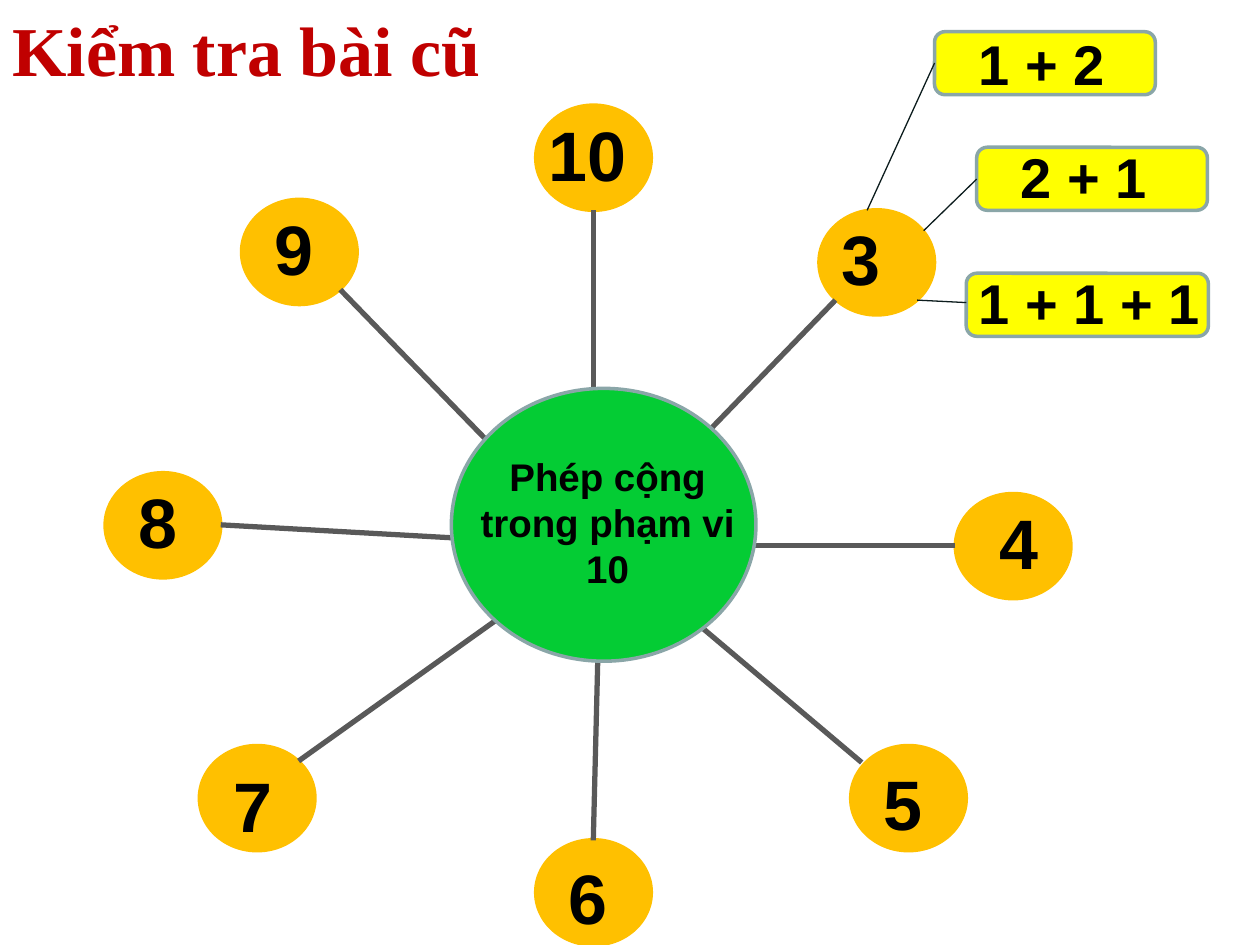
from dataclasses import dataclass

from lxml import etree
from pptx import Presentation
from pptx.dml.color import RGBColor
from pptx.enum import shapes as sh, text as tx
from pptx.oxml import ns
from pptx.util import Cm, Pt

RED = RGBColor(0xC0, 0x00, 0x00)
GOLD = RGBColor(0xFF, 0xC0, 0x00)
GREEN = RGBColor(0x04, 0xCC, 0x34)
YELLOW = RGBColor(0xFF, 0xFF, 0x00)
STEEL = RGBColor(0x8A, 0xA6, 0xA8)
GRAY = RGBColor(0x59, 0x59, 0x59)
DARK = RGBColor(0x0C, 0x1C, 0x1D)
BLACK = RGBColor(0x00, 0x00, 0x00)

OVAL = sh.MSO_SHAPE.OVAL
ROUND = sh.MSO_SHAPE.ROUNDED_RECTANGLE
Point = tuple[float, float]


@dataclass
class Disc:
    label: str
    at: Point
    text: Point
    start: Point
    end: Point
    width: float = 1.48


@dataclass
class Sum:
    label: str
    at: Point
    width: float
    text: Point
    room: float
    start: Point
    end: Point


# Lengths are in centimetres.
DISCS = [
    Disc("10", (10.8, 2.12), (10.8, 2.12), (11.96, 8.69), (11.96, 4.24), 2.12),
    Disc("3", (16.51, 4.23), (16.72, 4.23), (13.23, 9.78), (16.84, 6.05)),
    Disc("4", (19.26, 9.95), (19.9, 9.95), (19.26, 11), (13.77, 11)),
    Disc("5", (17.15, 15.03), (17.57, 15.2), (17.37, 15.37), (13.97, 12.5)),
    Disc("6", (10.8, 16.93), (11.22, 17.1), (11.96, 16.94), (12.07, 12.5)),
    Disc("7", (4.02, 15.03), (4.45, 15.24), (6.02, 15.34), (10.69, 12.01)),
    Disc("8", (2.12, 9.53), (2.54, 9.53), (4.45, 10.58), (10.16, 10.9)),
    Disc("9", (4.87, 4.02), (5.29, 4.02), (10.69, 9.78), (6.86, 5.84)),
]
SUMS = [
    Sum("1 + 2", (18.84, 0.64), 4.45, (19.48, 0.48), 3.6,
        (18.84, 1.27), (17.48, 4.24)),
    Sum("2 + 1", (19.69, 2.97), 4.65, (20.32, 2.74), 3.6,
        (18.62, 4.65), (19.69, 3.61)),
    Sum("1 + 1 + 1", (19.48, 5.51), 4.88, (19.48, 5.28), 5.28,
        (18.49, 6.05), (19.48, 6.1)),
]


def add_form(slide, kind, at: Point, size: Point, fill: RGBColor,
             edge: RGBColor) -> None:
    form = slide.shapes.add_shape(kind, *map(Cm, at + size))
    form.shadow.inherit = False
    form.fill.solid()
    form.fill.fore_color.rgb = fill
    form.line.color.rgb = edge
    form.line.width = Pt(2)


def add_line(slide, start: Point, end: Point, color: RGBColor,
             width: float) -> None:
    line = slide.shapes.add_connector(
        sh.MSO_CONNECTOR.STRAIGHT, *map(Cm, start + end))
    line.line.color.rgb = color
    line.line.width = Pt(width)
    etree.SubElement(line._element.spPr, ns.qn("a:effectLst"))


def add_text(slide, words: str, at: Point, size: Point, points: float,
             color: RGBColor = BLACK, font: str = "Arial", align=None) -> None:
    frame = slide.shapes.add_textbox(*map(Cm, at + size)).text_frame
    frame.word_wrap = True
    frame.text = words
    for para in frame.paragraphs:
        para.alignment = align
        for run in para.runs:
            run.font.name = font
            run.font.size = Pt(points)
            run.font.bold = True
            run.font.color.rgb = color


def main() -> None:
    deck = Presentation()
    deck.slide_width, deck.slide_height = Cm(25.4), Cm(19.05)
    slide = deck.slides.add_slide(deck.slide_layouts[6])

    add_text(slide, "Kiểm tra bài cũ", (0, 0), (10.8, 1.96), 40, RED,
             "Times New Roman")
    for disc in DISCS:
        add_form(slide, OVAL, disc.at, (2.33, 2.12), GOLD, GOLD)
        add_line(slide, disc.start, disc.end, GRAY, 3)
        add_text(slide, disc.label, disc.text, (disc.width, 1.96), 40)
    for item in SUMS:
        add_form(slide, ROUND, item.at, (item.width, 1.27), YELLOW, STEEL)
        add_line(slide, item.start, item.end, DARK, 0.75)
        add_text(slide, item.label, item.text, (item.room, 1.63), 32)

    add_form(slide, OVAL, (9.1, 7.83), (6.14, 5.5), GREEN, STEEL)
    add_text(slide, "Phép cộng\ntrong phạm vi 10", (9.2, 9), (6.1, 3.07), 22,
             align=tx.PP_ALIGN.CENTER)
    deck.save("out.pptx")


if __name__ == "__main__":
    main()
